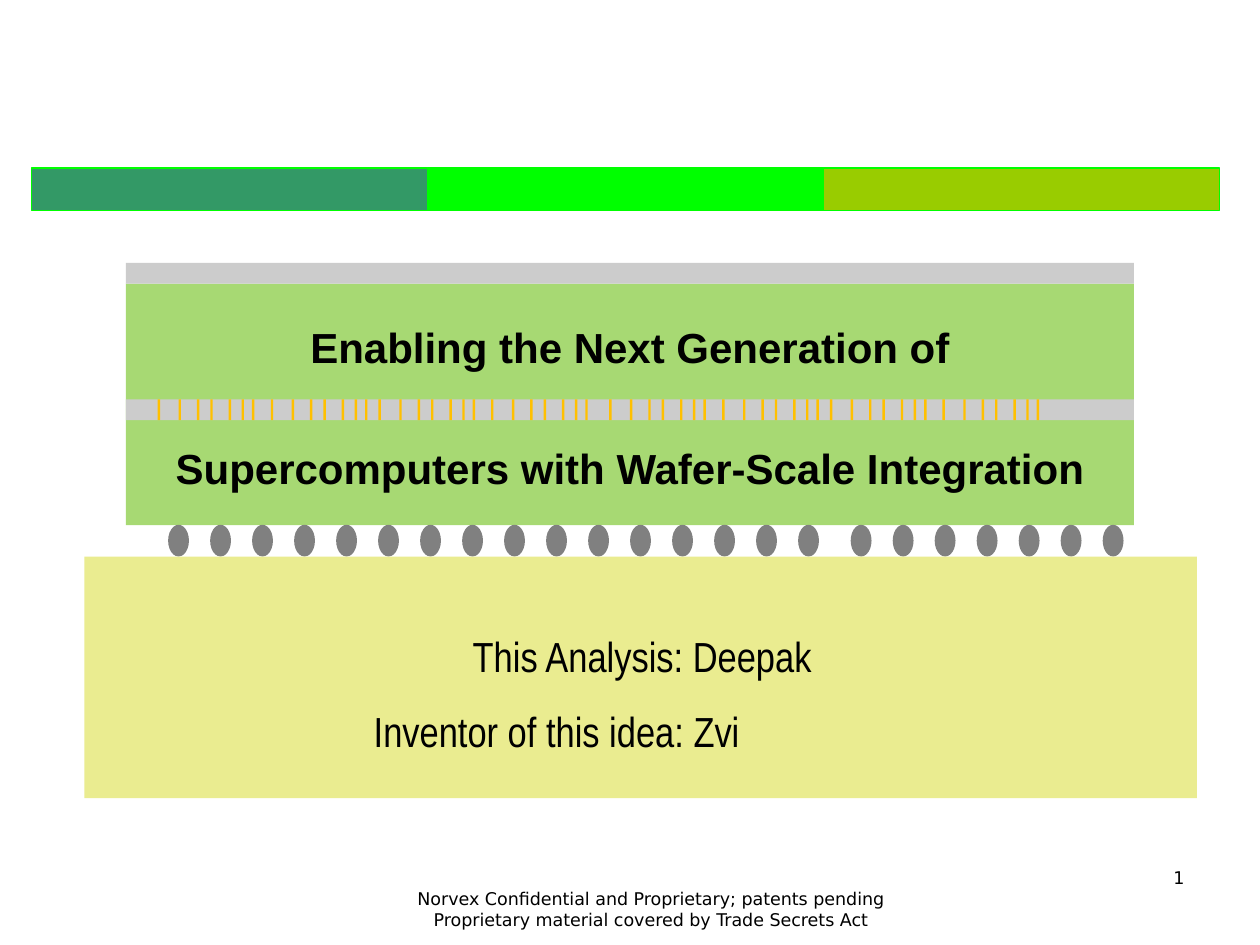
from dataclasses import dataclass
from itertools import product

from lxml import etree
from pptx import Presentation
from pptx import util as u
from pptx.dml.color import RGBColor
from pptx.enum import shapes, text
from pptx.oxml.ns import qn


@dataclass(frozen=True)
class Theme:
    """Colours, fonts and type sizes of the slide."""
    ink: str = "000000"
    stripe_edge: str = "00FF00"
    stripes: tuple[str, ...] = ("339966", "00FF00", "99CC00")
    wafer: str = "92D050"
    oxide: str = "CCCCCC"
    via: str = "FFC000"
    ball: str = "808080"
    board: str = "EAEC90"
    title_font: str = "Arial"
    credit_font: str = "Arial Narrow"
    footer_font: str = "DejaVu Sans"
    large: int = 24
    small: int = 10


@dataclass(frozen=True)
class Area:
    """A place on the slide in centimetres."""
    left: float
    top: float
    width: float
    height: float

    def lengths(self) -> list[u.Cm]:
        """Return the four measures as lengths."""
        return [u.Cm(v) for v in (self.left, self.top, self.width, self.height)]


@dataclass(frozen=True)
class Wafer:
    """A wafer layer carrying one line of the title."""
    area: Area
    title: str


@dataclass(frozen=True)
class Caption:
    """A free text with its type and alignment."""
    area: Area
    lines: tuple[str, ...]
    font: str
    size: int
    align: text.PP_ALIGN
    spacing: float = 1.0
    first_margin: float = 0


THEME = Theme()
INCH = 2.54
STACK_LEFT, STACK_WIDTH = 2.54, 20.32
OXIDE_HEIGHT = 0.42
BOND_TOP, BALL_TOP = 8.05, 10.58
STRIPE_LEFT, STRIPE_WIDTH = 0.64, 7.98

WAFERS = (
    Wafer(Area(STACK_LEFT, 5.72, STACK_WIDTH, 2.54), "Enabling the Next Generation of"),
    Wafer(Area(STACK_LEFT, 8.26, STACK_WIDTH, 2.33), "Supercomputers with Wafer-Scale Integration"),
)
VIA_HALVES = (3.18, 12.28)
VIA_GROUPS = (0, 2.28, 4.45, 6.72)
VIA_OFFSETS = (0, 0.42, 0.79, 1.06, 1.43, 1.69, 1.9)
BALL_PITCH = INCH / 3
BALL_RUNS = ((3.39, 16), (17.15, 7))

FOOTERS = (
    Caption(Area(7.62, 17.78, 11, 1.06),
            ("Norvex Confidential and Proprietary; patents pending",
             "Proprietary material covered by Trade Secrets Act"),
            THEME.footer_font, THEME.small, text.PP_ALIGN.CENTER),
    Caption(Area(18.2, 17.36, 5.93, 1.27), ("1",),
            THEME.footer_font, THEME.small, text.PP_ALIGN.RIGHT),
)
CREDITS = Caption(Area(0.85, 12.07, 20.74, 3.33),
                  ("This Analysis: Deepak", "Inventor of this idea: Zvi"),
                  THEME.credit_font, THEME.large, text.PP_ALIGN.CENTER, 1.5, 3.45)


def draw_block(slide, area: Area, fill: str, edge: str | None = None,
               kind=shapes.MSO_SHAPE.RECTANGLE):
    """Draw a flat filled shape, outlined only when an edge colour is given."""
    block = slide.shapes.add_shape(kind, *area.lengths())
    block.shadow.inherit = False
    block.fill.solid()
    block.fill.fore_color.rgb = RGBColor.from_string(fill)
    if edge:
        block.line.color.rgb = RGBColor.from_string(edge)
        block.line.width = u.Pt(0.75)
    else:
        block.line.fill.background()
    return block


def style_font(font, name: str, size: int, bold: bool = False) -> None:
    """Apply typeface, size, weight and ink."""
    font.name, font.size, font.bold = name, u.Pt(size), bold
    font.color.rgb = RGBColor.from_string(THEME.ink)


def draw_wafer(slide, wafer: Wafer) -> None:
    """Draw a translucent wafer with its title line."""
    layer = draw_block(slide, wafer.area, THEME.wafer)
    colour = layer.fill._xPr.find(qn("a:solidFill"))[0]
    etree.SubElement(colour, qn("a:alpha"), val="80000")
    frame = layer.text_frame
    frame.text = wafer.title
    frame.word_wrap = True
    frame.vertical_anchor = text.MSO_ANCHOR.MIDDLE
    title = frame.paragraphs[0]
    title.alignment = text.PP_ALIGN.CENTER
    style_font(title.runs[0].font, THEME.title_font, THEME.large, True)


def draw_caption(slide, caption: Caption) -> None:
    """Write a caption, one paragraph to a line."""
    frame = slide.shapes.add_textbox(*caption.area.lengths()).text_frame
    frame.word_wrap = True
    frame.text = "\n".join(caption.lines)
    for line in frame.paragraphs:
        line.alignment = caption.align
        line.line_spacing = caption.spacing
        style_font(line.runs[0].font, caption.font, caption.size)
    if caption.first_margin:
        frame.paragraphs[0]._p.get_or_add_pPr().set("marL", str(u.Cm(caption.first_margin)))


def draw_stack(slide) -> None:
    """Draw the bonded wafers, their vias, the solder balls and the board."""
    for wafer in WAFERS:
        draw_wafer(slide, wafer)
    for top in (BOND_TOP, 5.3):
        draw_block(slide, Area(STACK_LEFT, top, STACK_WIDTH, OXIDE_HEIGHT), THEME.oxide)
    for position in product(VIA_HALVES, VIA_GROUPS, VIA_OFFSETS):
        draw_block(slide, Area(sum(position), BOND_TOP, 0.05, OXIDE_HEIGHT), THEME.via)
    for start, count in BALL_RUNS:
        for index in range(count):
            ball = Area(start + index * BALL_PITCH, BALL_TOP, 0.42, 0.64)
            draw_block(slide, ball, THEME.ball, kind=shapes.MSO_SHAPE.OVAL)
    draw_block(slide, Area(1.7, 11.22, 22.43, 4.87), THEME.board)


def main() -> None:
    """Build and save the title slide."""
    deck = Presentation()
    deck.slide_width, deck.slide_height = u.Cm(25.4), u.Cm(19.05)
    slide = deck.slides.add_slide(deck.slide_layouts[6])
    for footer in FOOTERS:
        draw_caption(slide, footer)
    for index, colour in enumerate(THEME.stripes):
        stripe = Area(STRIPE_LEFT + index * STRIPE_WIDTH, 3.39, STRIPE_WIDTH, 0.85)
        draw_block(slide, stripe, colour, THEME.stripe_edge)
    draw_stack(slide)
    draw_caption(slide, CREDITS)
    deck.save("out.pptx")


if __name__ == "__main__":
    main()
